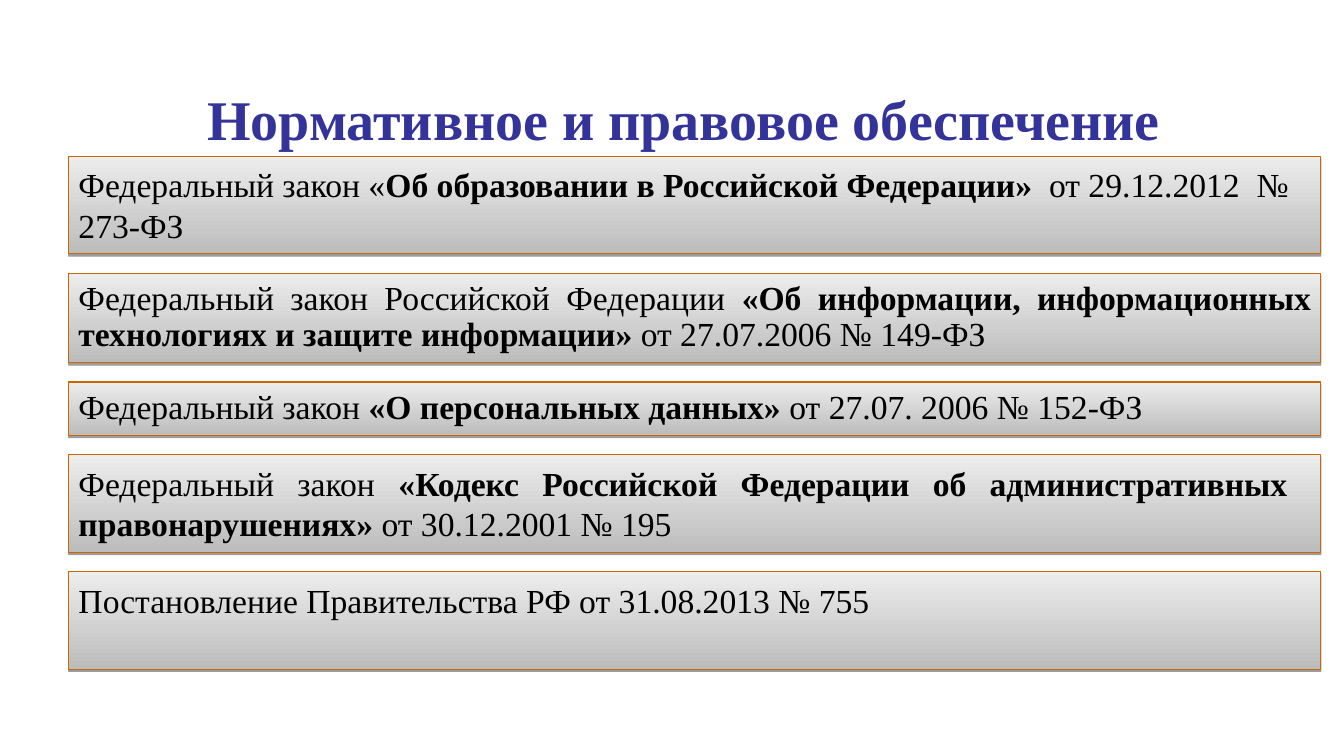
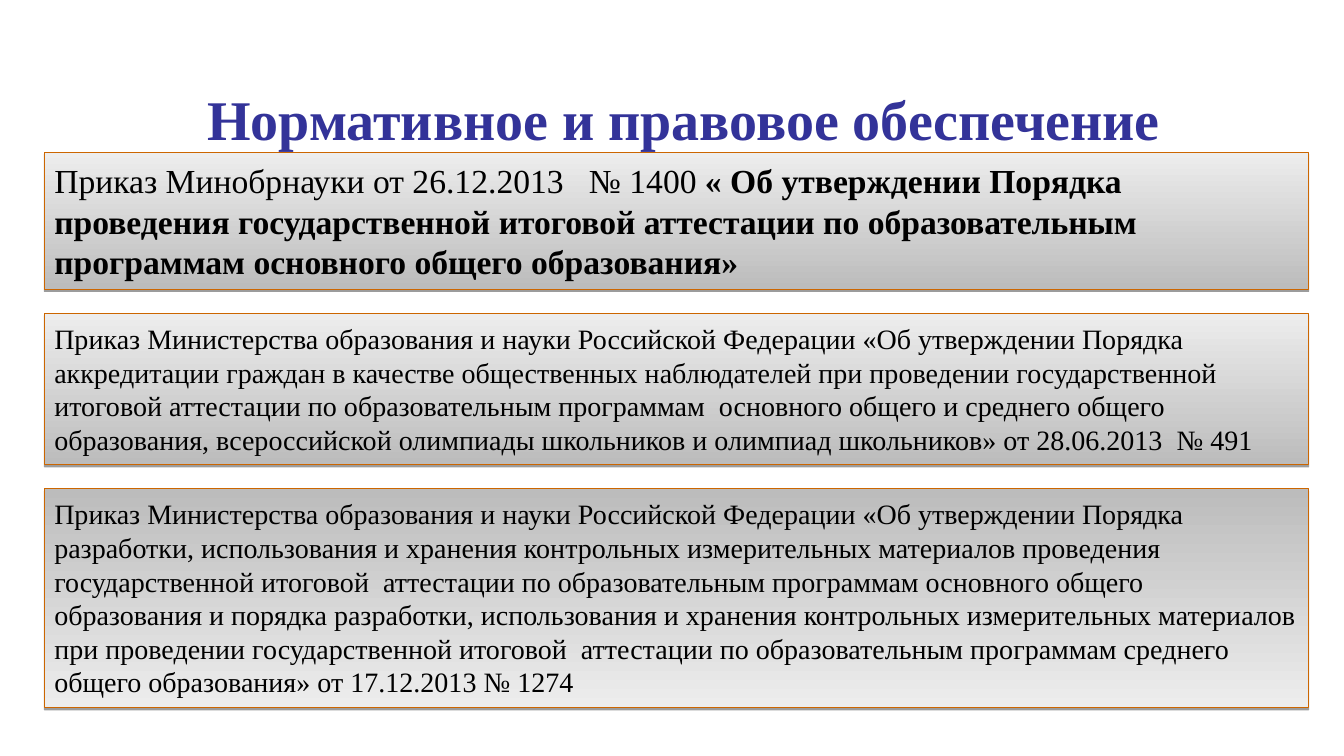
import pptx
import pptx.util
import pptx.dml.color
import pptx.enum.shapes
import pptx.enum.text
import pptx.oxml
import pptx.oxml.ns

Inches, Pt = pptx.util.Inches, pptx.util.Pt
ALIGN = pptx.enum.text.PP_ALIGN
ANCHOR = pptx.enum.text.MSO_ANCHOR

FONT = "Times New Roman"
TITLE_COLOR, TEXT_COLOR, BORDER_COLOR = "333399", "000000", "CC6600"
DARK, LIGHT = "BCBCBC", "EDEDED"
TITLE = "Нормативное и правовое обеспечение "
TITLE_BOX = (0.89, 0.89, 11.92, 0.64)
SHADOW_XML = (
    f'<a:outerShdw {pptx.oxml.ns.nsdecls("a")} blurRad="0" dist="20000" dir="5400000" rotWithShape="0">'
    '<a:srgbClr val="000000"><a:alpha val="38000"/></a:srgbClr></a:outerShdw>')

# Each act: height, options, then (text, bold) parts.
FEDERAL_ACTS = [
    (0.97, {}, [
        ("Федеральный закон «", False),
        ("Об образовании в Российской Федерации»", True),
        ("  от 29.12.2012  № 273-ФЗ", False)]),
    (0.89, {"align": ALIGN.JUSTIFY, "spacing": 0.9}, [
        ("Федеральный закон Российской Федерации ", False),
        ("«Об информации, информационных технологиях и защите информации» ", True),
        ("от 27.07.2006 № 149-ФЗ", False)]),
    (0.53, {"align": ALIGN.JUSTIFY, "spacing": 0.9}, [
        ("Федеральный закон ", False),
        ("«О персональных данных» ", True),
        ("от 27.07. 2006 № 152-ФЗ", False)]),
    (0.97, {"align": ALIGN.JUSTIFY}, [
        ("Федеральный закон ", False),
        ("«Кодекс Российской Федерации об административных  правонарушениях» ", True),
        ("от 30.12.2001 № 195", False)]),
    (0.97, {}, [("Постановление Правительства РФ от 31.08.2013 № 755", False)]),
]

MINISTRY_ORDERS = [
    (1.36, {}, [
        ("Приказ Минобрнауки от 26.12.2013   № 1400 ", False),
        ("« Об утверждении Порядка проведения государственной итоговой аттестации "
         "по образовательным программам основного общего образования»", True)]),
    (1.5, {"size": 20}, [
        ("Приказ Министерства образования и науки Российской Федерации «Об утверждении Порядка  "
         "аккредитации граждан в качестве общественных наблюдателей при проведении государственной  "
         "итоговой аттестации по образовательным программам  основного общего и среднего общего "
         "образования, всероссийской олимпиады школьников и олимпиад школьников» "
         "от 28.06.2013  № 491", False)]),
    (2.17, {"size": 20, "top_color": DARK, "bottom_color": LIGHT}, [
        ("Приказ Министерства образования и науки Российской Федерации «Об утверждении Порядка "
         "разработки, использования и хранения контрольных измерительных материалов проведения "
         "государственной итоговой  аттестации по образовательным программам основного общего "
         "образования и порядка разработки, использования и хранения контрольных измерительных "
         "материалов при проведении государственной итоговой  аттестации по образовательным "
         "программам среднего общего образования» от 17.12.2013 № 1274", False)]),
]


def rgb(value):
    return pptx.dml.color.RGBColor.from_string(value)


def style_font(font, size, color, bold):
    font.name, font.size, font.bold = FONT, Pt(size), bold
    font.color.rgb = rgb(color)


def place_title(slide, box):
    title = slide.shapes.title
    title.left, title.top, title.width, title.height = map(Inches, box)
    frame = title.text_frame
    frame.text = TITLE
    frame.word_wrap = True
    frame.auto_size = pptx.enum.text.MSO_AUTO_SIZE.NONE
    frame.vertical_anchor = ANCHOR.MIDDLE
    heading = frame.paragraphs[0]
    heading.alignment, heading.line_spacing = ALIGN.CENTER, 0.9
    style_font(heading.runs[0].font, 40, TITLE_COLOR, True)


def add_panel(slide, box, top_color, bottom_color):
    """Add a rectangle with a vertical gradient, a thin border and a hard shadow."""
    panel = slide.shapes.add_shape(pptx.enum.shapes.MSO_SHAPE.RECTANGLE, *map(Inches, box))
    panel.fill.gradient()
    panel.fill.gradient_angle = 90
    for stop, color in zip(panel.fill.gradient_stops, (bottom_color, top_color)):
        stop.color.rgb = rgb(color)
    panel.line.color.rgb = rgb(BORDER_COLOR)
    panel.line.width = Pt(0.75)
    panel.shadow.inherit = False
    effects = panel.element.spPr.find(pptx.oxml.ns.qn("a:effectLst"))
    effects.append(pptx.oxml.parse_xml(SHADOW_XML))
    return panel


def add_act(slide, box, parts, size=24, align=ALIGN.LEFT, spacing=None,
            top_color=LIGHT, bottom_color=DARK):
    frame = add_panel(slide, box, top_color, bottom_color).text_frame
    frame.word_wrap = True
    frame.vertical_anchor = ANCHOR.TOP
    frame.margin_left = frame.margin_right = Inches(0.1)
    frame.margin_top = frame.margin_bottom = Inches(0.08)
    paragraph = frame.paragraphs[0]
    paragraph.alignment = align
    if spacing:
        paragraph.line_spacing = spacing
    for text, bold in parts:
        run = paragraph.add_run()
        run.text = text
        style_font(run.font, size, TEXT_COLOR, bold)


def add_acts_slide(deck, acts, left, top, width, gap):
    """Add a titled slide with the acts stacked at equal gaps."""
    slide = deck.slides.add_slide(deck.slide_layouts[5])
    place_title(slide, TITLE_BOX)
    for height, options, parts in acts:
        add_act(slide, (left, top, width, height), parts, **options)
        top += height + gap


def main():
    deck = pptx.Presentation()
    deck.slide_width, deck.slide_height = Inches(13.33), Inches(7.5)
    add_acts_slide(deck, FEDERAL_ACTS, left=0.68, top=1.55, width=12.42, gap=0.19)
    add_acts_slide(deck, MINISTRY_ORDERS, left=0.44, top=1.51, width=12.54, gap=0.24)
    deck.save("out.pptx")


if __name__ == "__main__":
    main()
